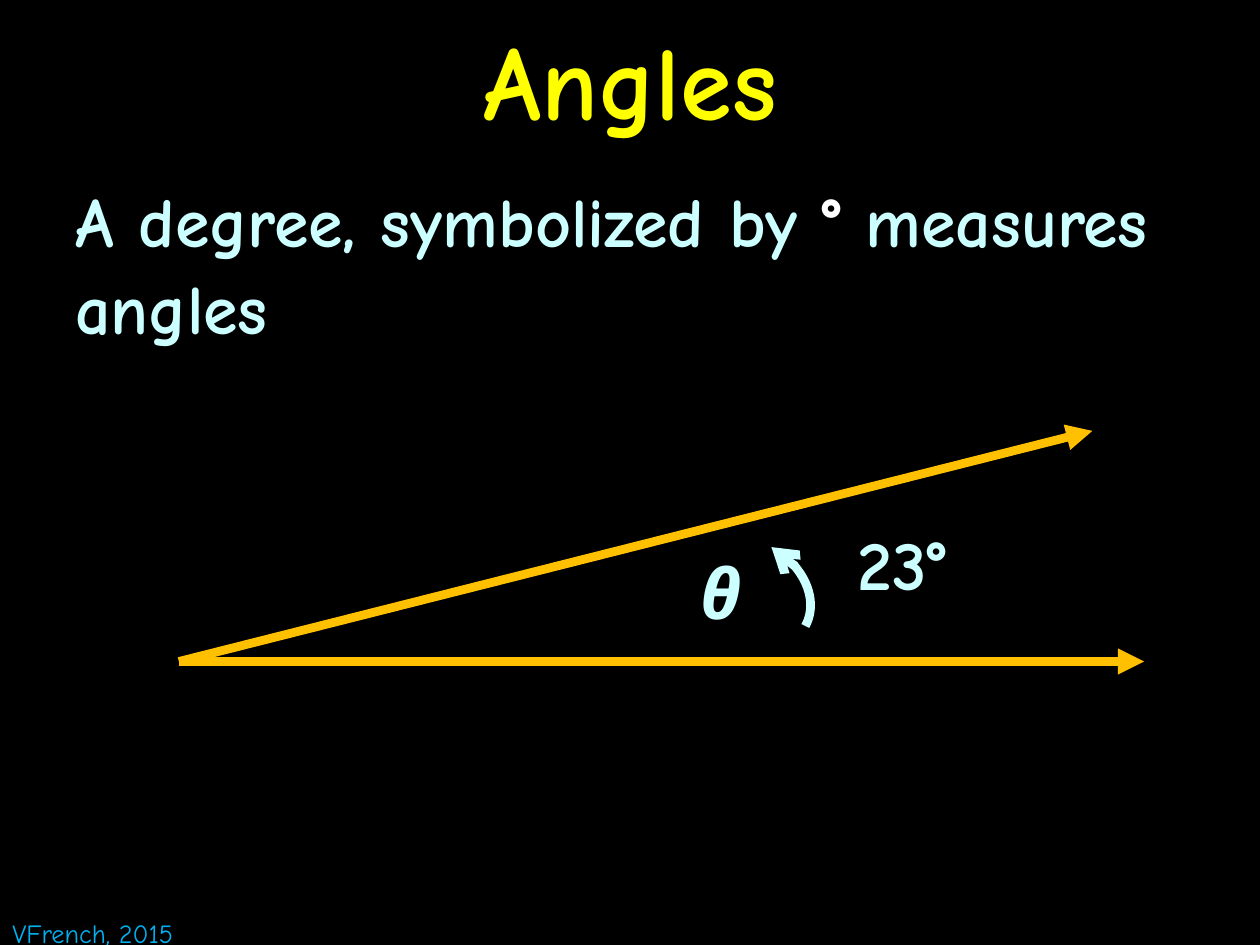
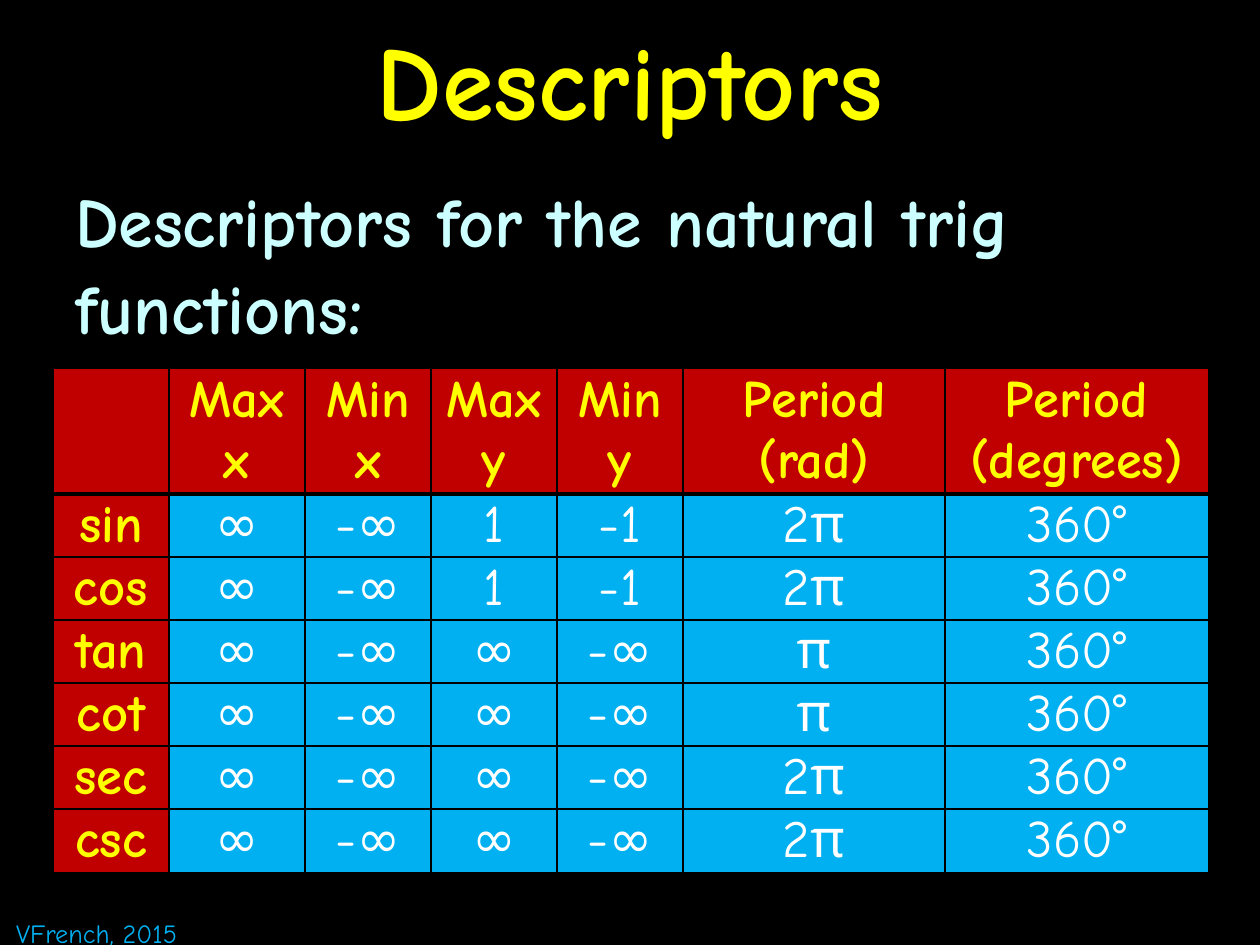
import pptx
import pptx.util
import pptx.dml.color
import pptx.enum.shapes
import pptx.enum.text
import pptx.oxml
import pptx.oxml.ns

Inches, Pt = pptx.util.Inches, pptx.util.Pt
RGBColor = pptx.dml.color.RGBColor
CENTER = pptx.enum.text.PP_ALIGN.CENTER
MIDDLE = pptx.enum.text.MSO_ANCHOR.MIDDLE

# Shared colours and text styles
BLACK = RGBColor(0x00, 0x00, 0x00)
WHITE = RGBColor(0xFF, 0xFF, 0xFF)
YELLOW = RGBColor(0xFF, 0xFF, 0x00)
PALE_CYAN = RGBColor(0xCC, 0xFF, 0xFF)
ORANGE = RGBColor(0xFF, 0xC0, 0x00)
RED = RGBColor(0xC0, 0x00, 0x00)
BLUE = RGBColor(0x00, 0xB0, 0xF0)

FONT = "Comic Neue"
TITLE = {"size": Pt(60), "bold": True, "color": YELLOW}
BODY = {"size": Pt(40), "bold": True, "color": PALE_CYAN}
DEGREE_SIGN = {**BODY, "color": WHITE}
ANGLE_NAME = {**BODY, "italic": True}
FOOTER = {"size": Pt(15), "bold": False, "color": BLUE}
HEADING = {"size": Pt(30), "bold": True, "color": YELLOW}
VALUE = {"size": Pt(30), "bold": False, "color": WHITE}

# Table content
COLUMN_WIDTHS = [0.92, 1.08, 1, 1, 1, 2.08, 2.09]
HEADER_HEIGHT, ROW_HEIGHT = 0.96, 0.48
DESCRIPTORS = [
    ["", "Max x", "Min x", "Max y", "Min y", "Period (rad)", "Period (degrees)"],
    ["sin", "∞", "-∞", "1", "-1", "2π", "360°"],
    ["cos", "∞", "-∞", "1", "-1", "2π", "360°"],
    ["tan", "∞", "-∞", "∞", "-∞", "π", "360°"],
    ["cot", "∞", "-∞", "∞", "-∞", "π", "360°"],
    ["sec", "∞", "-∞", "∞", "-∞", "2π", "360°"],
    ["csc", "∞", "-∞", "∞", "-∞", "2π", "360°"],
]


def add_run(p, text, style):
    r = p.add_run()
    r.text = text
    r.font.name = FONT
    for name, value in style.items():
        if name == "color":
            r.font.color.rgb = value
        else:
            setattr(r.font, name, value)


def add_text(slide, box, runs, wrap=False):
    sp = slide.shapes.add_textbox(*map(Inches, box))
    tf = sp.text_frame
    tf.word_wrap = wrap
    for text, style in runs:
        add_run(tf.paragraphs[0], text, style)
    return tf.paragraphs[0]


def add_body(slide, runs):
    p = add_text(slide, (0.5, 1.33, 9, 6.17), runs, wrap=True)
    p.line_spacing = 1.04


def add_titled_slide(prs, title, footer_left):
    slide = prs.slides.add_slide(prs.slide_layouts[5])
    sp = slide.shapes.title
    sp.left, sp.top, sp.width, sp.height = map(Inches, (0, 0, 10, 1.25))
    tf = sp.text_frame
    tf.vertical_anchor = MIDDLE
    p = tf.paragraphs[0]
    p.alignment = CENTER
    add_run(p, title, TITLE)
    add_text(slide, (footer_left, 7.23, 1.65, 0.35), [("VFrench, 2015", FOOTER)])
    return slide


def style_line(sp, color, end, kind):
    """Colour a 5 pt line and put an arrowhead on one end."""
    sp.line.color.rgb = color
    sp.line.width = Pt(5)
    ln = sp.line._get_or_add_ln()
    pptx.oxml.ns.qn("a:ln")
    ln.append(pptx.oxml.parse_xml(
        f'<a:{end} {pptx.oxml.ns.nsdecls("a")} type="{kind}"/>'))


def add_ray(slide, start, end):
    sp = slide.shapes.add_connector(
        pptx.enum.shapes.MSO_CONNECTOR.STRAIGHT, *map(Inches, start + end))
    style_line(sp, ORANGE, "tailEnd", "triangle")
    sp._element.spPr.append(pptx.oxml.parse_xml(
        f'<a:effectLst {pptx.oxml.ns.nsdecls("a")}/>'))


def add_angle_arc(slide, box, rotation):
    sp = slide.shapes.add_shape(
        pptx.enum.shapes.MSO_SHAPE.ARC, *map(Inches, box))
    sp.rotation = rotation
    sp.shadow.inherit = False
    sp.fill.background()
    style_line(sp, PALE_CYAN, "headEnd", "arrow")


def set_borders(cell, widths):
    tcPr = cell._tc.get_or_add_tcPr()
    for side, width in widths.items():
        tcPr.append(pptx.oxml.parse_xml(
            f'<a:ln{side} {pptx.oxml.ns.nsdecls("a")} w="{Pt(width)}">'
            f'<a:solidFill><a:srgbClr val="{BLACK}"/></a:solidFill></a:ln{side}>'))


def fill_cell(cell, text, row, col):
    is_heading = row == 0 or col == 0
    set_borders(cell, {"L": 1, "R": 1, "T": 3 if row == 1 else 1,
                       "B": 3 if row == 0 else 1})
    cell.fill.solid()
    cell.fill.fore_color.rgb = RED if is_heading else BLUE
    layout = {"vertical_anchor": MIDDLE, "margin_left": Inches(0.07),
              "margin_right": Inches(0.07), "margin_top": 0, "margin_bottom": 0}
    for name, value in layout.items():
        setattr(cell, name, value)
    if text:
        p = cell.text_frame.paragraphs[0]
        p.alignment = CENTER
        add_run(p, text, HEADING if is_heading else VALUE)


def add_descriptor_table(slide, left, top):
    heights = [HEADER_HEIGHT] + [ROW_HEIGHT] * (len(DESCRIPTORS) - 1)
    table = slide.shapes.add_table(
        len(heights), len(COLUMN_WIDTHS), Inches(left), Inches(top),
        Inches(sum(COLUMN_WIDTHS)), Inches(sum(heights))).table
    for column, width in zip(table.columns, COLUMN_WIDTHS):
        column.width = Inches(width)
    for row, height in zip(table.rows, heights):
        row.height = Inches(height)
    for i, texts in enumerate(DESCRIPTORS):
        for j, text in enumerate(texts):
            fill_cell(table.cell(i, j), text, i, j)


def build_angles(prs):
    slide = add_titled_slide(prs, "Angles", 0)
    add_body(slide, [("A degree, symbolized by ", BODY), ("° ", DEGREE_SIGN),
                     ("measures angles", BODY)])
    # Two rays from one vertex, with the angle between them
    vertex = (1.42, 5.25)
    for tip in ((9.08, 5.25), (8.67, 3.42)):
        add_ray(slide, vertex, tip)
    add_angle_arc(slide, (5.38, 4.29, 1.08, 0.83), 29.2)
    add_text(slide, (6.71, 4.08, 1.11, 0.77), [("23°", BODY)])
    add_text(slide, (5.46, 4.31, 0.54, 0.77), [("θ", ANGLE_NAME)])


def build_descriptors(prs):
    slide = add_titled_slide(prs, "Descriptors", 0.03)
    add_body(slide, [("Descriptors for the natural trig functions:", BODY)])
    add_descriptor_table(slide, 0.42, 2.92)


def main():
    prs = pptx.Presentation()
    prs.slide_width, prs.slide_height = Inches(10), Inches(7.5)
    # Black background for every slide
    fill = prs.slide_master.background.fill
    fill.solid()
    fill.fore_color.rgb = BLACK
    build_angles(prs)
    build_descriptors(prs)
    prs.save("out.pptx")


if __name__ == "__main__":
    main()
